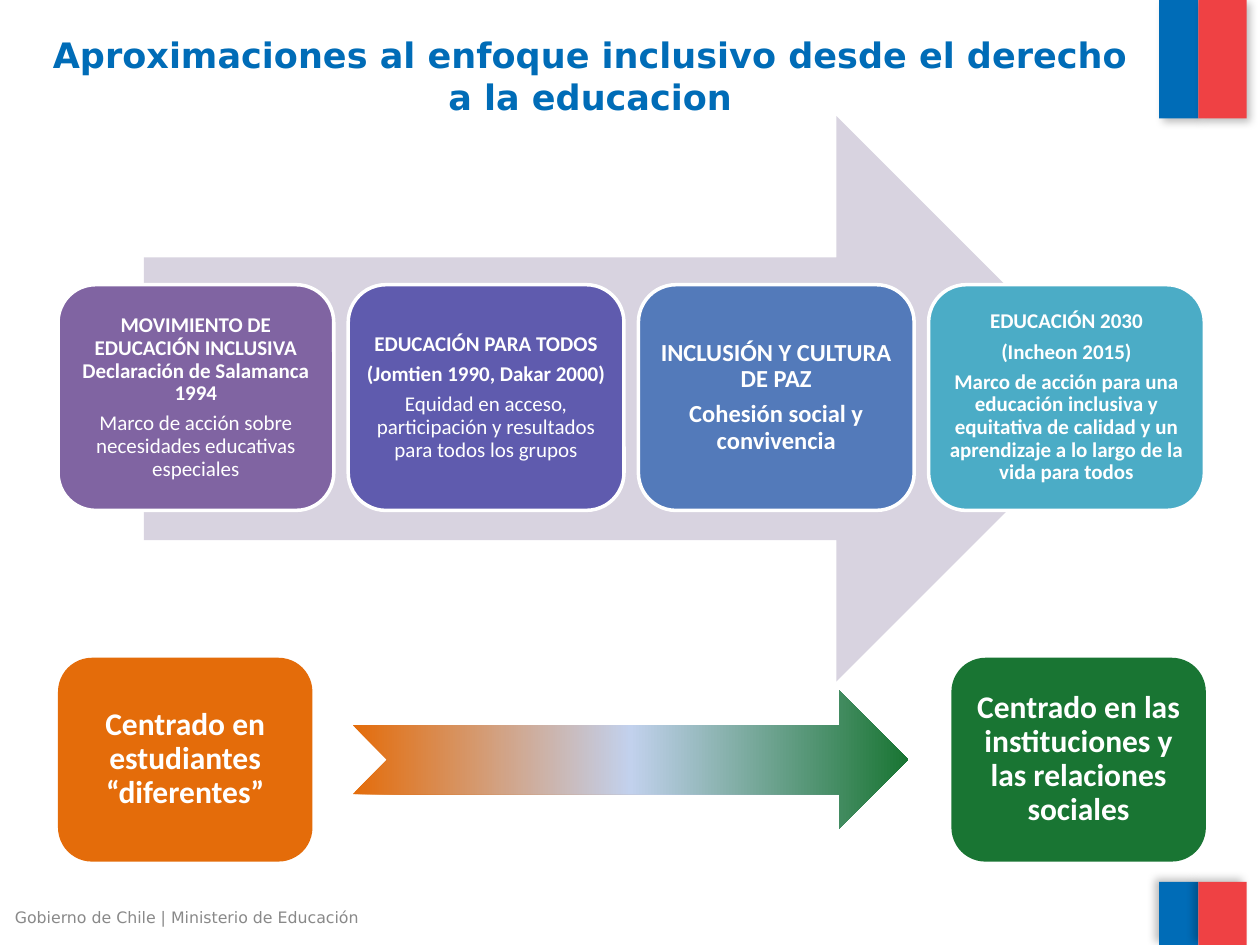
import pptx
import pptx.dml.color
import pptx.enum.shapes
import pptx.enum.text
import pptx.oxml
import pptx.util
import lxml.etree

Cm = pptx.util.Cm
Pt = pptx.util.Pt
SHAPES = pptx.enum.shapes.MSO_SHAPE
ALIGN = pptx.enum.text.PP_ALIGN
NAMESPACE = "http://schemas.openxmlformats.org/drawingml/2006/main"


def color(hex_text):
    return pptx.dml.color.RGBColor.from_string(hex_text)


def write(box, paragraphs, size, font="Calibri", ink="FFFFFF", align=ALIGN.CENTER,
          inset=0.13, line_spacing=0.9, gap=0.35):
    """Fill a box with (text, bold) paragraphs; gap is a share of the text size."""
    frame = box.text_frame
    frame.word_wrap = True
    frame.vertical_anchor = pptx.enum.text.MSO_ANCHOR.MIDDLE
    frame.margin_left = frame.margin_right = Cm(inset)
    frame.margin_top = frame.margin_bottom = Cm(inset)
    for index, (text, bold) in enumerate(paragraphs):
        para = frame.paragraphs[0] if index == 0 else frame.add_paragraph()
        para.alignment = align
        para.line_spacing = line_spacing
        para.space_after = Pt(size * gap)
        span = para.add_run()
        span.text = text
        span.font.name = font
        span.font.size = Pt(size)
        span.font.bold = bold
        span.font.color.rgb = color(ink)


deck = pptx.Presentation()
deck.slide_width = Cm(25.4)
deck.slide_height = Cm(19.05)
page = deck.slides.add_slide(deck.slide_layouts[6])

# Footer and title
footer = page.shapes.add_textbox(Cm(0.05), Cm(18.14), Cm(8.05), Cm(0.69))
write(footer, [("Gobierno de Chile | Ministerio de Educación", False)], 9,
      font="DejaVu Sans", ink="898989", align=ALIGN.LEFT, inset=0.25,
      line_spacing=1, gap=0)
title = page.shapes.add_textbox(Cm(0.79), Cm(0.53), Cm(22.22), Cm(1.98))
write(title, [("Aproximaciones al enfoque inclusivo desde el derecho a la educacion", True)],
      20, font="DejaVu Sans", ink="006CB7", line_spacing=1, gap=0)

# Two-colour bands at the top and bottom right, each with a soft shadow
for top, height, shadow_angle in [(0, 2.39, 45), (17.78, 1.27, 215)]:
    for left, width, fill in [(23.37, 0.79, "006CB7"), (24.16, 0.97, "EF4144")]:
        band = page.shapes.add_shape(SHAPES.RECTANGLE, Cm(left), Cm(top),
                                     Cm(width), Cm(height))
        band.fill.solid()
        band.fill.fore_color.rgb = color(fill)
        band.line.fill.background()
        band.shadow.inherit = False
        effects = band.element.spPr.find(f"{{{NAMESPACE}}}effectLst")
        effects.append(pptx.oxml.parse_xml(
            f'<a:outerShdw xmlns:a="{NAMESPACE}" blurRad="{Pt(5)}" dist="{Pt(3)}" '
            f'dir="{shadow_angle * 60000}" rotWithShape="0">'
            '<a:srgbClr val="000000"><a:alpha val="25000"/></a:srgbClr></a:outerShdw>'))

# Timeline arrow behind the milestones
timeline = page.shapes.add_shape(SHAPES.RIGHT_ARROW, Cm(2.9), Cm(2.34), Cm(19.66), Cm(11.4))
timeline.fill.solid()
timeline.fill.fore_color.rgb = color("D8D3E0")
timeline.line.fill.background()
timeline.shadow.inherit = False

milestones = [
    ("8064A2", 12, [
        ("MOVIMIENTO DE EDUCACIÓN INCLUSIVA Declaración de Salamanca 1994", True),
        ("Marco de acción sobre necesidades educativas especiales", False)]),
    ("5F5BAE", 12, [
        ("EDUCACIÓN PARA TODOS", True),
        ("(Jomtien 1990, Dakar 2000)", True),
        ("Equidad en acceso, participación y resultados para todos los grupos", False)]),
    ("537ABA", 14, [
        ("INCLUSIÓN Y CULTURA DE PAZ", True),
        ("Cohesión social y convivencia", True)]),
    ("4BACC6", 12, [
        ("EDUCACIÓN 2030", True),
        ("(Incheon 2015)", True),
        ("Marco de acción para una educación inclusiva y equitativa de calidad "
         "y un aprendizaje a lo largo de la vida para todos", True)]),
]
for index, (fill, size, paragraphs) in enumerate(milestones):
    card = page.shapes.add_shape(SHAPES.ROUNDED_RECTANGLE, Cm(1.17 + 5.85 * index),
                                 Cm(5.74), Cm(5.56), Cm(4.55))
    card.fill.solid()
    card.fill.fore_color.rgb = color(fill)
    card.line.color.rgb = color("FFFFFF")
    card.line.width = Pt(2)
    card.shadow.inherit = False
    write(card, paragraphs, size)

# Change of focus: from the students to the institutions
for left, fill, text in [
    (1.17, "E46C0A", "Centrado en estudiantes “diferentes”"),
    (19.18, "197533", "Centrado en las instituciones y las relaciones sociales"),
]:
    focus = page.shapes.add_shape(SHAPES.ROUNDED_RECTANGLE, Cm(left), Cm(13.26),
                                  Cm(5.13), Cm(4.11))
    focus.fill.solid()
    focus.fill.fore_color.rgb = color(fill)
    focus.line.fill.background()
    focus.shadow.inherit = False
    write(focus, [(text, True)], 18)

shift = page.shapes.add_shape(SHAPES.NOTCHED_RIGHT_ARROW, Cm(7.11), Cm(13.92),
                              Cm(11.2), Cm(2.79))
shift.line.fill.background()
shift.shadow.inherit = False
shift.fill.gradient()
shift.fill.gradient_angle = 0
stops = shift.element.spPr.find(f".//{{{NAMESPACE}}}gsLst")
for stop in list(stops):
    stops.remove(stop)
for position, fill in [(0, "E46C0A"), (50, "C2D1ED"), (100, "197533")]:
    stop = lxml.etree.SubElement(stops, f"{{{NAMESPACE}}}gs", pos=str(position * 1000))
    lxml.etree.SubElement(stop, f"{{{NAMESPACE}}}srgbClr", val=fill)

deck.save("out.pptx")
